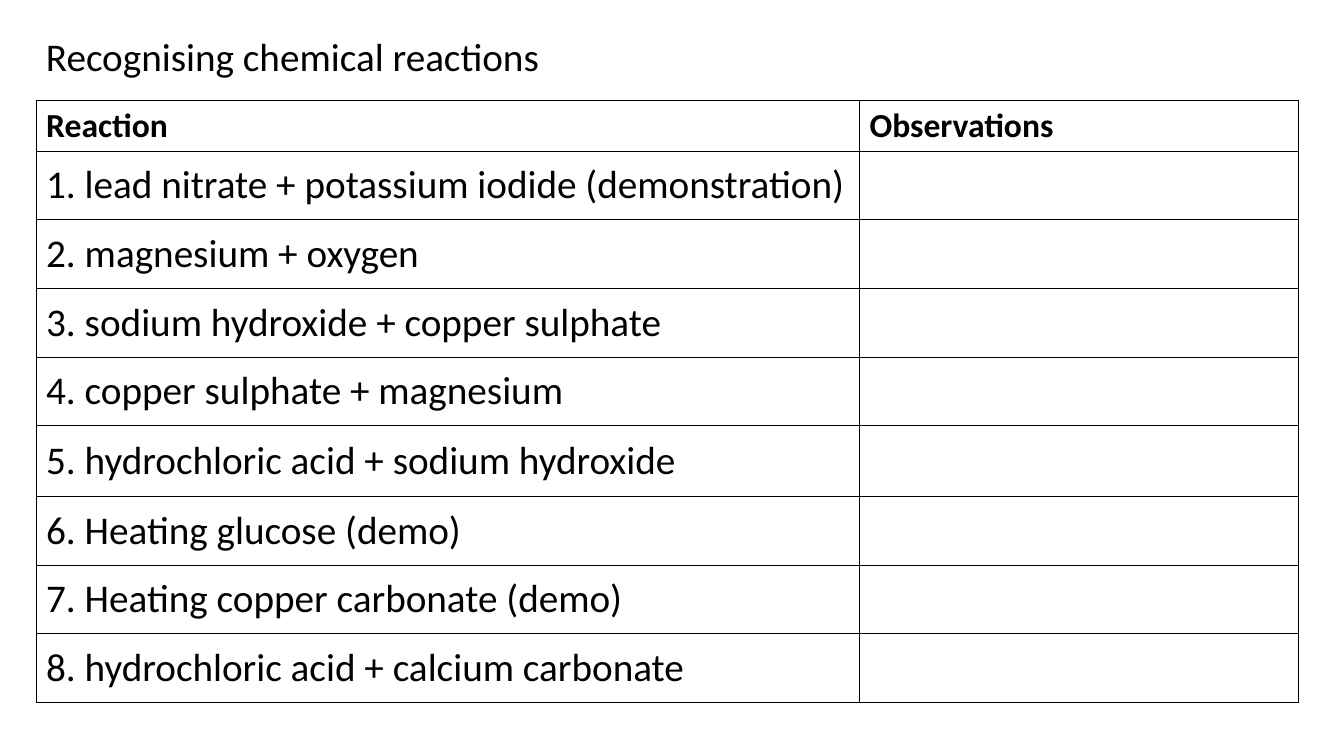
from dataclasses import dataclass

from lxml.etree import SubElement
from pptx import Presentation
from pptx.dml.color import RGBColor
from pptx.enum.text import MSO_ANCHOR as Anchor, MSO_AUTO_SIZE as AutoSize
from pptx.oxml.ns import qn
from pptx.util import Cm, Pt


@dataclass(frozen=True)
class Theme:
    font: str = "Calibri"
    ink: str = "000000"
    body_size: int = 28
    header_size: int = 24
    border_width: int = 1


class Sheet:
    """Holds the theme and the current slide."""

    def __init__(self, slide, theme):
        self.slide = slide
        self.theme = theme

    def add_text(self, paragraph, text, size, bold=False):
        run = paragraph.add_run()
        run.text = text
        formats = {"name": self.theme.font, "size": Pt(size), "bold": bold}
        for key, value in formats.items():
            setattr(run.font, key, value)
        run.font.color.rgb = RGBColor.from_string(self.theme.ink)

    def heading(self, text, left, top, width, height):
        heading = self.slide.shapes.add_textbox(Cm(left), Cm(top), Cm(width), Cm(height))
        formats = {"word_wrap": True, "auto_size": AutoSize.SHAPE_TO_FIT_TEXT}
        for key, value in formats.items():
            setattr(heading.text_frame, key, value)
        self.add_text(heading.text_frame.paragraphs[0], text, self.theme.body_size)

    def outline(self, cell):
        properties = cell._tc.get_or_add_tcPr()
        for side in ("lnL", "lnR", "lnT", "lnB"):
            line = SubElement(properties, qn(f"a:{side}"), w=str(Pt(self.theme.border_width)))
            fill = SubElement(line, qn("a:solidFill"))
            SubElement(fill, qn("a:srgbClr"), val=self.theme.ink)
        cell.fill.background()

    def grid(self, headers, entries, left, top, widths, heights):
        grid = self.slide.shapes.add_table(
            len(heights), len(widths), Cm(left), Cm(top), Cm(sum(widths)), Cm(sum(heights))
        ).table
        for flag in ("first_row", "horz_banding"):
            setattr(grid, flag, False)
        for column, width in zip(grid.columns, widths):
            column.width = Cm(width)
        for row, height in zip(grid.rows, heights):
            row.height = Cm(height)
        for cell in grid.iter_cells():
            self.outline(cell)

        # Header row
        for index, header in enumerate(headers):
            paragraph = grid.cell(0, index).text_frame.paragraphs[0]
            self.add_text(paragraph, header, self.theme.header_size, bold=True)

        # Numbered entries in the first column
        for number, entry in enumerate(entries, start=1):
            cell = grid.cell(number, 0)
            cell.vertical_anchor = Anchor.MIDDLE
            self.add_text(cell.text_frame.paragraphs[0], f"{number}. {entry}", self.theme.body_size)


REACTIONS = [
    "lead nitrate + potassium iodide (demonstration)",
    "magnesium + oxygen",
    "sodium hydroxide + copper sulphate",
    "copper sulphate + magnesium",
    "hydrochloric acid + sodium hydroxide",
    "Heating glucose (demo)",
    "Heating copper carbonate (demo)",
    "hydrochloric acid + calcium carbonate",
]


def main():
    deck = Presentation()
    deck.slide_width, deck.slide_height = Cm(33.87), Cm(19.05)
    sheet = Sheet(deck.slides.add_slide(deck.slide_layouts[6]), Theme())
    left = 0.91

    # Title
    sheet.heading("Recognising chemical reactions", left, 0.69, 25.4, 1.45)

    # Reactions, with space for observations
    heights = [1.27] + [1.73] * len(REACTIONS)
    heights[5] = 1.78
    sheet.grid(["Reaction", "Observations"], REACTIONS, left, 2.54, [20.75, 11.07], heights)

    deck.save("out.pptx")


if __name__ == "__main__":
    main()
